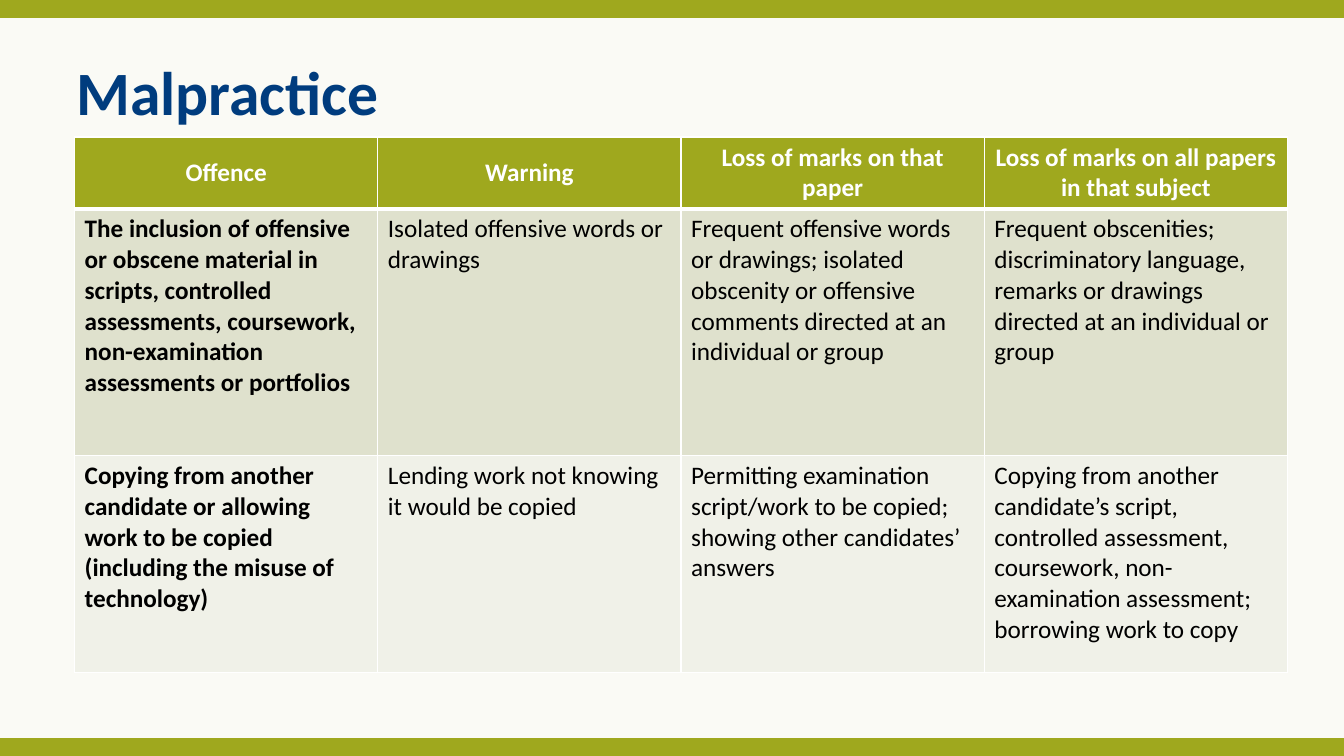
from dataclasses import dataclass

from lxml import etree
from pptx import Presentation
from pptx.dml.color import RGBColor
from pptx.enum.dml import MSO_PATTERN
from pptx.enum.shapes import MSO_CONNECTOR, MSO_SHAPE
from pptx.enum.text import MSO_ANCHOR, PP_ALIGN
from pptx.oxml.ns import qn
from pptx.util import Inches, Pt

RECTANGLE = MSO_SHAPE.RECTANGLE
STRAIGHT = MSO_CONNECTOR.STRAIGHT
DARK_HORIZONTAL = MSO_PATTERN.DARK_HORIZONTAL
MIDDLE, TOP = MSO_ANCHOR.MIDDLE, MSO_ANCHOR.TOP
CENTER, LEFT = PP_ALIGN.CENTER, PP_ALIGN.LEFT


@dataclass(frozen=True)
class Theme:
    font: str = "Calibri"
    title_size: int = 44
    table_size: int = 18
    navy: str = "003C7E"
    olive: str = "9FA81E"
    cream: str = "FAFAF5"
    white: str = "FFFFFF"
    black: str = "000000"
    row_fills: tuple = ("9FA81E", "DFE1CD", "F0F1E8")


theme = Theme()

ROWS = [
    ["Offence", "Warning", "Loss of marks on that paper",
     "Loss of marks on all papers in that subject"],
    ["The inclusion of offensive or obscene material in scripts, controlled "
     "assessments, coursework, non-examination assessments or portfolios",
     "Isolated offensive words or drawings",
     "Frequent offensive words or drawings; isolated obscenity or offensive "
     "comments directed at an\nindividual or group",
     "Frequent obscenities;\ndiscriminatory language,\nremarks or drawings\n"
     "directed at an individual or group"],
    ["Copying from another\ncandidate or allowing work to be copied "
     "(including the misuse of technology)",
     "Lending work not knowing it would be copied",
     "Permitting examination\nscript/work to be copied;\n"
     "showing other candidates’ answers",
     "Copying from another\ncandidate’s script,\ncontrolled assessment,\n"
     "coursework, non-\nexamination assessment;\nborrowing work to copy"],
]
ROW_HEIGHTS = [0.69, 2.45, 2.15]


def style_font(font, size, color, bold):
    font.name = theme.font
    font.size = Pt(size)
    font.bold = bold
    font.color.rgb = RGBColor.from_string(color)


def add_borders(cell, bottom_width):
    properties = cell._tc.get_or_add_tcPr()
    for side, width in (("L", 1), ("R", 1), ("T", 1), ("B", bottom_width)):
        line = etree.SubElement(properties, qn(f"a:ln{side}"), w=str(Pt(width)))
        fill = etree.SubElement(line, qn("a:solidFill"))
        etree.SubElement(fill, qn("a:srgbClr"), val=theme.white)


deck = Presentation()
deck.slide_width = Inches(13.33)
deck.slide_height = Inches(7.5)
page = deck.slides.add_slide(deck.slide_layouts[5])

# Backdrop behind everything
backdrop = page.shapes.add_shape(RECTANGLE, 0, 0, deck.slide_width, deck.slide_height)
backdrop.shadow.inherit = False
backdrop.line.fill.background()
backdrop.fill.patterned()
backdrop.fill.pattern = DARK_HORIZONTAL
backdrop.fill.fore_color.rgb = RGBColor.from_string(theme.cream)
backdrop.fill.back_color.rgb = RGBColor.from_string(theme.white)
page.shapes._spTree.insert(2, backdrop._element)

# Top and bottom bars
for bar_y in (0.09, 7.41):
    bar = page.shapes.add_connector(
        STRAIGHT, 0, Inches(bar_y), deck.slide_width, Inches(bar_y))
    bar.line.width = Pt(13)
    bar.line.color.rgb = RGBColor.from_string(theme.olive)
    etree.SubElement(bar._element.spPr, qn("a:effectLst"))

# Title
title = page.shapes.title
title.left, title.top = Inches(0.66), Inches(0.49)
title.width, title.height = Inches(12.03), Inches(0.92)
title.text_frame.text = "Malpractice"
title.text_frame.vertical_anchor = MIDDLE
heading = title.text_frame.paragraphs[0]
heading.alignment = LEFT
heading.line_spacing = 0.9
style_font(heading.font, theme.title_size, theme.navy, True)

# Penalty table
table = page.shapes.add_table(
    len(ROWS), len(ROWS[0]), Inches(0.74), Inches(1.36),
    Inches(12.03), Inches(sum(ROW_HEIGHTS))).table
for row_index, texts in enumerate(ROWS):
    table.rows[row_index].height = Inches(ROW_HEIGHTS[row_index])
    is_header = row_index == 0
    for column_index, text in enumerate(texts):
        cell = table.cell(row_index, column_index)
        cell.text = text
        cell.vertical_anchor = MIDDLE if is_header else TOP
        add_borders(cell, 3 if is_header else 1)
        cell.fill.solid()
        cell.fill.fore_color.rgb = RGBColor.from_string(theme.row_fills[row_index])
        for para in cell.text_frame.paragraphs:
            para.alignment = CENTER if is_header else LEFT
            style_font(para.font, theme.table_size,
                       theme.white if is_header else theme.black,
                       is_header or column_index == 0)

deck.save("out.pptx")
